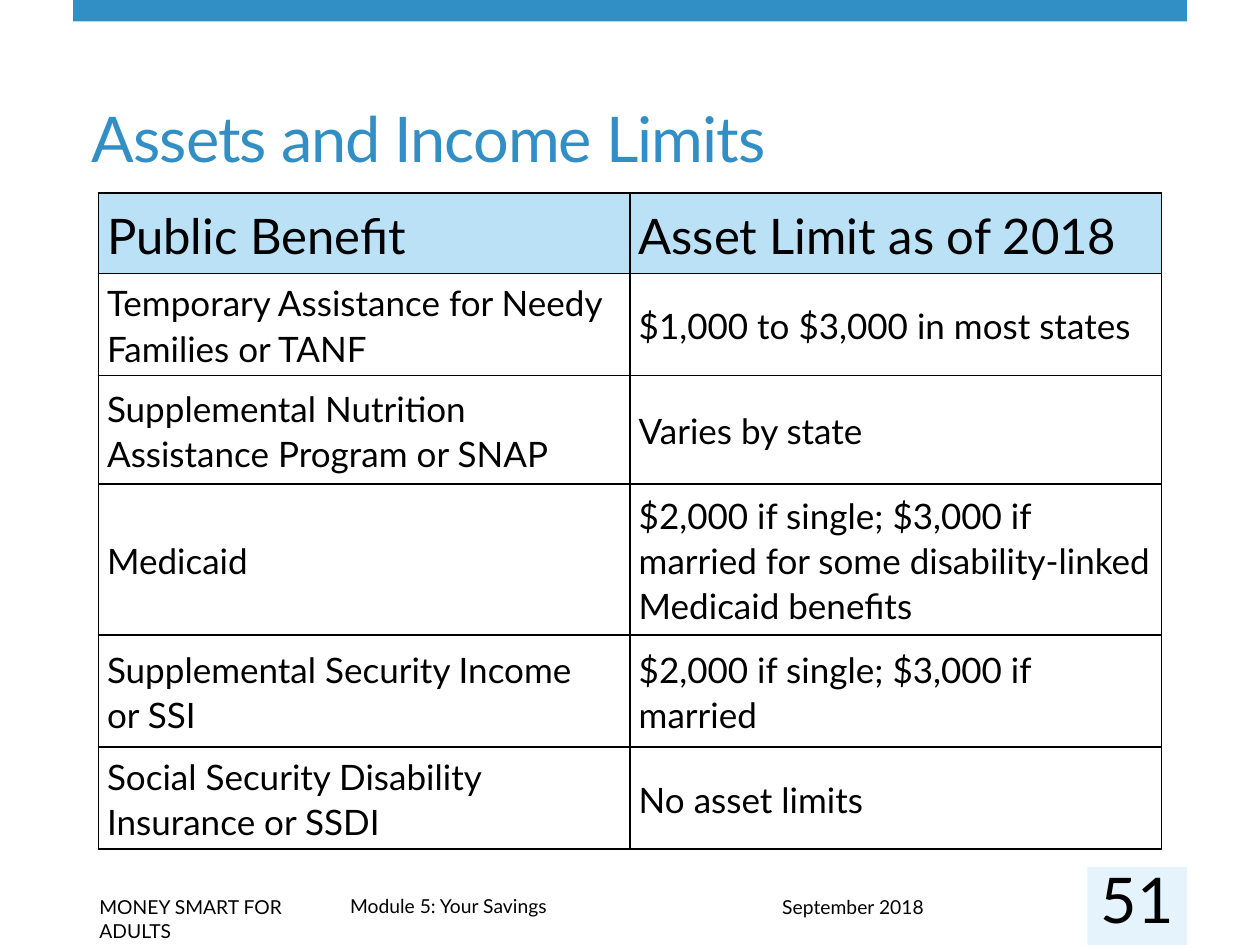
from dataclasses import dataclass

from lxml.etree import SubElement
from pptx import Presentation
from pptx.dml.color import RGBColor
from pptx.enum.shapes import MSO_SHAPE
from pptx.enum.text import MSO_ANCHOR, PP_ALIGN
from pptx.oxml import parse_xml
from pptx.oxml.ns import nsdecls, qn
from pptx.util import Inches, Pt


@dataclass(frozen=True)
class Theme:
    font: str = "Lato"
    blue: str = "318FC5"
    pale_blue: str = "E4F3FC"
    header_blue: str = "76C5EF"
    black: str = "000000"
    title_size: int = 36
    header_size: int = 28
    body_size: int = 20
    footer_size: int = 11


THEME = Theme()

LIMITS = [
    ("Public Benefit", "Asset Limit as of 2018"),
    ("Temporary Assistance for Needy Families or TANF",
     "$1,000 to $3,000 in most states"),
    ("Supplemental Nutrition Assistance Program or SNAP", "Varies by state"),
    ("Medicaid",
     "$2,000 if single; $3,000 if married for some disability-linked Medicaid benefits"),
    ("Supplemental Security Income\nor SSI", "$2,000 if single; $3,000 if married"),
    ("Social Security Disability Insurance or SSDI", "No asset limits"),
]
ROW_HEIGHTS = [0.64, 0.81, 0.86, 1.2, 0.89, 0.81]
COLUMN_WIDTH = 4.22

FOOTERS = [
    ("MONEY SMART FOR ADULTS", 0.69, 7.06, 2.09),
    ("Module 5: Your Savings", 2.68, 7.05, 5.66),
    ("September 2018", 6.11, 7.06, 2.52),
]


def write(frame, text, *, size, color=THEME.black, align=PP_ALIGN.LEFT,
          line_spacing=1.0, tracking=None):
    """Fill the first paragraph; a newline in the text is a line break."""
    frame.word_wrap = True
    para = frame.paragraphs[0]
    para.alignment = align
    para.line_spacing = line_spacing
    for number, line in enumerate(text.split("\n")):
        if number:
            para.add_line_break()
        span = para.add_run()
        span.text = line
        span.font.name = THEME.font
        span.font.size = Pt(size)
        span.font.color.rgb = RGBColor.from_string(color)
        if tracking is not None:
            span.font._element.set("spc", str(round(tracking * 100)))


def add_block(page, left, top, width, height, color):
    block = page.shapes.add_shape(
        MSO_SHAPE.RECTANGLE, Inches(left), Inches(top), Inches(width), Inches(height))
    block.shadow.inherit = False
    block.fill.solid()
    block.fill.fore_color.rgb = RGBColor.from_string(color)
    block.line.fill.background()


def add_label(page, text, left, top, width, height, *, margins=None, **text_format):
    box = page.shapes.add_textbox(
        Inches(left), Inches(top), Inches(width), Inches(height))
    frame = box.text_frame
    if margins is not None:
        frame.margin_left = frame.margin_right = Inches(margins)
        frame.margin_top = frame.margin_bottom = Inches(margins)
    write(frame, text, **text_format)


def set_title(page, text):
    title = page.shapes.title
    title.left, title.top = Inches(0.63), Inches(0.48)
    title.width, title.height = Inches(8.2), Inches(0.96)
    title.text_frame.vertical_anchor = MSO_ANCHOR.BOTTOM
    write(title.text_frame, text, size=THEME.title_size, color=THEME.blue,
          tracking=-0.6)


def add_borders(cell):
    """Draw all four sides; borders must precede the fill in the cell XML."""
    properties = cell._tc.get_or_add_tcPr()
    for position, side in enumerate(("lnL", "lnR", "lnT", "lnB")):
        properties.insert(position, parse_xml(
            f'<a:{side} {nsdecls("a")} w="{Pt(1)}"><a:solidFill>'
            f'<a:srgbClr val="{THEME.black}"/></a:solidFill></a:{side}>'))


def fill_header(cell):
    cell.fill.solid()
    cell.fill.fore_color.rgb = RGBColor.from_string(THEME.header_blue)
    color = cell._tc.tcPr.find(qn("a:solidFill")).find(qn("a:srgbClr"))
    SubElement(color, qn("a:alpha")).set("val", "50000")


def format_cell(cell, text, is_header):
    cell.vertical_anchor = MSO_ANCHOR.MIDDLE
    cell.margin_left = cell.margin_right = Inches(0.07)
    cell.margin_top = cell.margin_bottom = 0
    write(cell.text_frame, text, line_spacing=1.07,
          size=THEME.header_size if is_header else THEME.body_size)
    if is_header:
        fill_header(cell)
    else:
        cell.fill.background()
    add_borders(cell)


def add_limits_table(page):
    columns = len(LIMITS[0])
    table = page.shapes.add_table(
        len(LIMITS), columns, Inches(0.78), Inches(1.53),
        Inches(COLUMN_WIDTH * columns), Inches(sum(ROW_HEIGHTS))).table
    table.first_row = True
    table.horz_banding = False
    for column in table.columns:
        column.width = Inches(COLUMN_WIDTH)
    for row_number, (row, height, texts) in enumerate(
            zip(table.rows, ROW_HEIGHTS, LIMITS)):
        row.height = Inches(height)
        for cell, text in zip(row.cells, texts):
            format_cell(cell, text, is_header=row_number == 0)


def main():
    deck = Presentation()
    deck.slide_width, deck.slide_height = Inches(10), Inches(7.5)
    page = deck.slides.add_slide(deck.slide_layouts.get_by_name("Title Only"))

    add_block(page, 0.58, 0, 8.84, 0.17, THEME.blue)
    add_block(page, 8.63, 6.88, 0.79, 0.62, THEME.pale_blue)
    set_title(page, "Assets and Income Limits")
    add_limits_table(page)
    for text, left, top, width in FOOTERS:
        add_label(page, text, left, top, width, 0.29, size=THEME.footer_size)
    add_label(page, "51", 8.63, 6.83, 0.79, 0.45, margins=0,
              size=THEME.title_size, align=PP_ALIGN.CENTER)

    deck.save("out.pptx")


if __name__ == "__main__":
    main()
